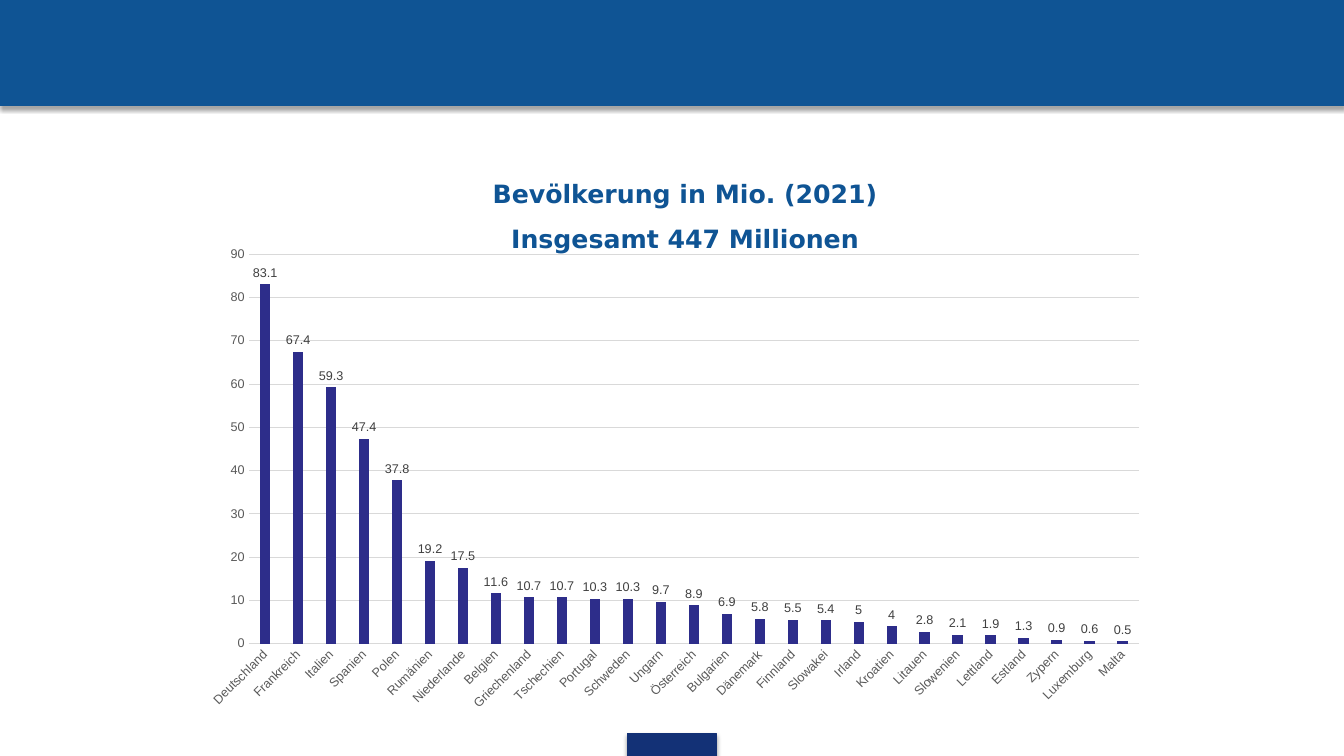
"""Build a slide with a column chart of the population of the EU countries."""
from lxml import etree
from pptx import Presentation
from pptx.chart.data import CategoryChartData
from pptx.dml.color import RGBColor
from pptx.enum.chart import XL_CHART_TYPE as ChartType, XL_LABEL_POSITION as LabelPosition
from pptx.enum.chart import XL_TICK_MARK as TickMark
from pptx.enum.shapes import MSO_SHAPE as Shape
from pptx.enum.text import MSO_ANCHOR as Anchor, MSO_AUTO_SIZE as AutoSize, PP_ALIGN as Align
from pptx.oxml import parse_xml
from pptx.util import Inches, Pt

BLUE = RGBColor(0x0F, 0x54, 0x94)
NAVY = RGBColor(0x13, 0x31, 0x76)
INDIGO = RGBColor(0x2D, 0x2D, 0x8A)
BLACK = RGBColor(0x00, 0x00, 0x00)
LABEL_GRAY = RGBColor(0x40, 0x40, 0x40)
AXIS_GRAY = RGBColor(0x59, 0x59, 0x59)
LINE_GRAY = RGBColor(0xD9, 0xD9, 0xD9)

SHADOW = (
    '<a:effectLst xmlns:a="http://schemas.openxmlformats.org/drawingml/2006/main">'
    '<a:outerShdw blurRad="39370" dist="22860" dir="5400000" rotWithShape="0">'
    '<a:srgbClr val="000000"><a:alpha val="35000"/></a:srgbClr>'
    '</a:outerShdw></a:effectLst>'
)
CHART_NS = "http://schemas.openxmlformats.org/drawingml/2006/chart"

POPULATION = {
    "Deutschland": 83.1, "Frankreich": 67.4, "Italien": 59.3, "Spanien": 47.4,
    "Polen": 37.8, "Rumänien": 19.2, "Niederlande": 17.5, "Belgien": 11.6,
    "Griechenland": 10.7, "Tschechien": 10.7, "Portugal": 10.3, "Schweden": 10.3,
    "Ungarn": 9.7, "Österreich": 8.9, "Bulgarien": 6.9, "Dänemark": 5.8,
    "Finnland": 5.5, "Slowakei": 5.4, "Irland": 5, "Kroatien": 4,
    "Litauen": 2.8, "Slowenien": 2.1, "Lettland": 1.9, "Estland": 1.3,
    "Zypern": 0.9, "Luxemburg": 0.6, "Malta": 0.5,
}


def set_font(font, name, size, color):
    font.name = name
    font.size = Pt(size)
    font.color.rgb = color


presentation = Presentation()
presentation.slide_width = Inches(13.33)
presentation.slide_height = Inches(7.5)
slide = presentation.slides.add_slide(presentation.slide_layouts[5])

for left, top, width, height, color in (
    (0, 0, 13.33, 1.05, BLUE),
    (6.22, 7.28, 0.89, 0.22, NAVY),
):
    band = slide.shapes.add_shape(
        Shape.RECTANGLE, Inches(left), Inches(top), Inches(width), Inches(height))
    band.fill.solid()
    band.fill.fore_color.rgb = color
    band.line.color.rgb = color
    band.line.width = Pt(0.75)
    band._element.spPr.append(parse_xml(SHADOW))

title = slide.shapes.title
title.left, title.top = Inches(2.1), Inches(1.97)
title.width, title.height = Inches(9), Inches(0.51)
frame = title.text_frame
frame.text = "Bevölkerung in Mio. (2021)\vInsgesamt 447 Millionen"
frame.word_wrap = True
frame.auto_size = AutoSize.NONE
frame.vertical_anchor = Anchor.MIDDLE
frame.margin_bottom = Inches(0.36)
paragraph = frame.paragraphs[0]
paragraph._p.get_or_add_pPr().set("marL", str(Inches(0.39)))
paragraph.alignment = Align.CENTER
paragraph.line_spacing = 1.5
set_font(paragraph.font, "DejaVu Sans", 18, BLUE)
paragraph.font.bold = True

chart_data = CategoryChartData()
chart_data.categories = list(POPULATION)
chart_data.add_series("Series 1", list(POPULATION.values()))
chart = slide.shapes.add_chart(
    ChartType.COLUMN_CLUSTERED, Inches(1.89), Inches(2.38), Inches(9.6), Inches(4.77),
    chart_data).chart
chart.has_title = False
chart.has_legend = False
set_font(chart.font, "Arial", 10, BLACK)

plot = chart.plots[0]
plot.vary_by_categories = False
plot.gap_width = 219
plot.overlap = -27
plot.series[0].format.fill.solid()
plot.series[0].format.fill.fore_color.rgb = INDIGO
plot.has_data_labels = True
labels = plot.data_labels
labels.show_value = True
labels.position = LabelPosition.OUTSIDE_END
set_font(labels.font, "Arial", 9, LABEL_GRAY)

for axis in (chart.category_axis, chart.value_axis):
    axis.major_tick_mark = TickMark.NONE
    axis.minor_tick_mark = TickMark.NONE
    set_font(axis.tick_labels.font, "Arial", 9, AXIS_GRAY)

countries, millions = chart.category_axis, chart.value_axis
countries.format.line.color.rgb = LINE_GRAY
countries.format.line.width = Pt(0.75)
countries._element.txPr.bodyPr.set("rot", "-2700000")
millions.minimum_scale, millions.maximum_scale, millions.major_unit = 0, 90, 10
millions.format.line.fill.background()
millions.has_major_gridlines = True
millions.major_gridlines.format.line.color.rgb = LINE_GRAY
millions.major_gridlines.format.line.width = Pt(0.75)

plot_area = chart._chartSpace.chart.plotArea
for layout in plot_area.findall(f"{{{CHART_NS}}}layout"):
    plot_area.remove(layout)
layout = etree.Element(f"{{{CHART_NS}}}layout")
manual = etree.SubElement(layout, f"{{{CHART_NS}}}manualLayout")
for tag, value in (
    ("layoutTarget", "inner"), ("xMode", "edge"), ("yMode", "edge"),
    ("x", "0.06"), ("y", "0.03"), ("w", "0.92"), ("h", "0.81"),
):
    etree.SubElement(manual, f"{{{CHART_NS}}}{tag}").set("val", value)
plot_area.insert(0, layout)

presentation.save("out.pptx")
